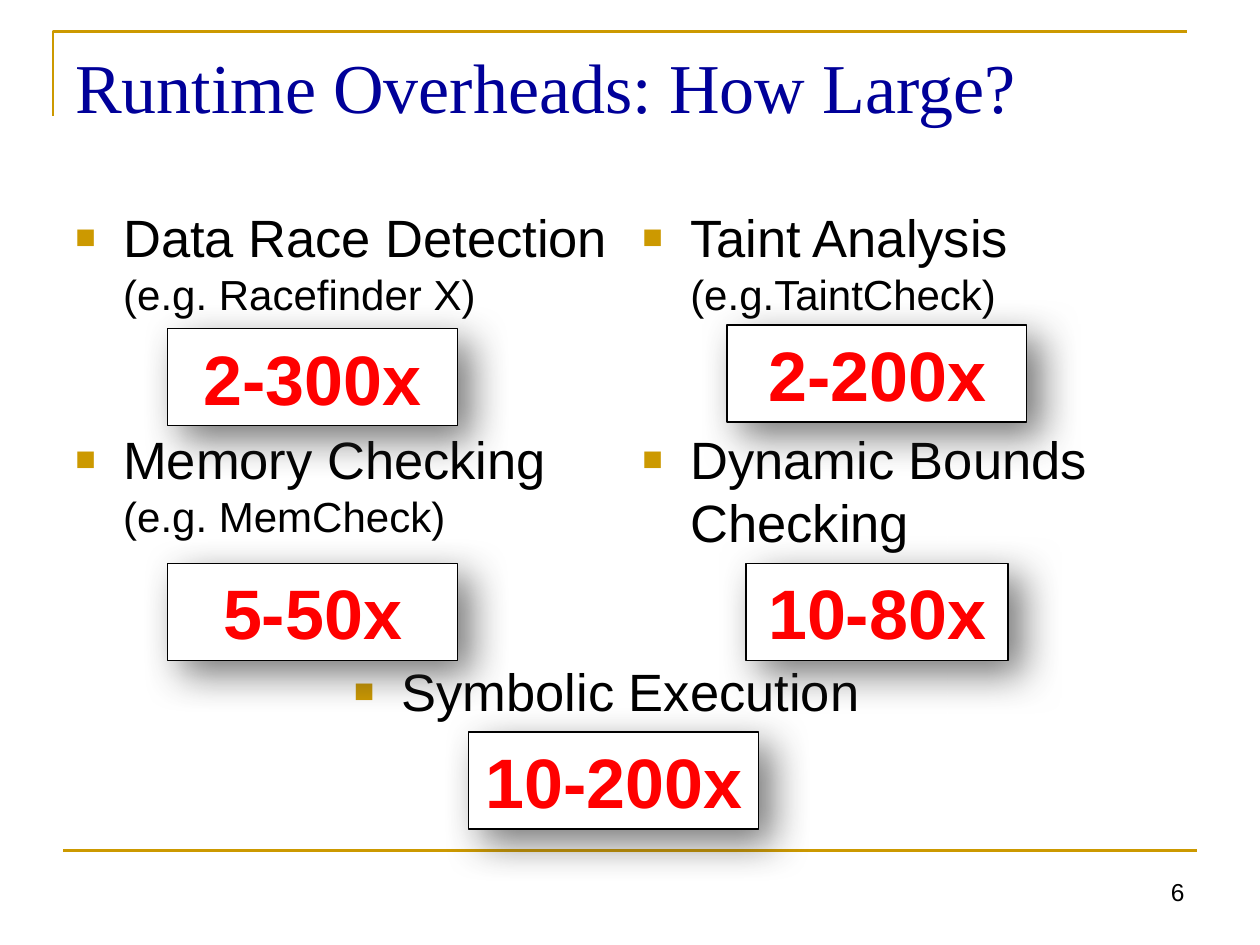
from lxml.etree import SubElement
from pptx import Presentation
from pptx.dml.color import RGBColor
from pptx.enum.shapes import MSO_CONNECTOR, MSO_SHAPE
from pptx.enum.text import MSO_ANCHOR, PP_ALIGN
from pptx.oxml.ns import qn
from pptx.util import Inches, Pt

COLORS = {
    "gold": "CC9900",
    "navy": "000099",
    "black": "000000",
    "white": "FFFFFF",
    "red": "FF0000",
    "shadow": "333333",
}


def rgb(name):
    return RGBColor.from_string(COLORS[name])


class SlideBuilder:
    body_font = "Arial"
    title_font = "Times New Roman"
    bullet_indent = Inches(0.38)

    def __init__(self, slide):
        self.slide = slide
        self.shapes = slide.shapes

    def add_run(self, paragraph, text, size, color="black", font=None, bold=False):
        run = paragraph.add_run()
        run.text = text
        run.font.name = font or self.body_font
        run.font.size = Pt(size)
        run.font.bold = bold
        run.font.color.rgb = rgb(color)

    def text_frame(self, left, top, width, height):
        box = self.shapes.add_textbox(
            Inches(left), Inches(top), Inches(width), Inches(height))
        box.text_frame.word_wrap = True
        return box.text_frame

    def text(self, text, box, size, color="black", font=None, align=PP_ALIGN.LEFT):
        paragraph = self.text_frame(*box).paragraphs[0]
        paragraph.alignment = align
        self.add_run(paragraph, text, size, color, font)

    def set_bullet(self, paragraph):
        properties = paragraph._p.get_or_add_pPr()
        properties.set("marL", str(self.bullet_indent))
        properties.set("indent", str(-self.bullet_indent))
        bullet_color = SubElement(properties, qn("a:buClr"))
        SubElement(bullet_color, qn("a:srgbClr"), val=COLORS["gold"])
        SubElement(properties, qn("a:buSzPct"), val="65000")
        SubElement(properties, qn("a:buFont"), typeface=self.body_font)
        SubElement(properties, qn("a:buChar"), char="■")

    def bullets(self, items, box, gap=62):
        frame = self.text_frame(*box)
        for index, (heading, example) in enumerate(items):
            paragraph = frame.add_paragraph() if index else frame.paragraphs[0]
            self.set_bullet(paragraph)
            if index:
                paragraph.space_before = Pt(gap)
            self.add_run(paragraph, heading, 30)
            if example:
                paragraph.add_line_break()
                self.add_run(paragraph, example, 24)

    def overhead(self, text, left, top, width):
        shape = self.shapes.add_shape(
            MSO_SHAPE.RECTANGLE, Inches(left), Inches(top), Inches(width), Inches(0.77))
        shape.fill.solid()
        shape.fill.fore_color.rgb = rgb("white")
        shape.line.color.rgb = rgb("black")
        shape.line.width = Pt(0.75)
        self.drop_shadow(shape)
        frame = shape.text_frame
        frame.word_wrap = False
        frame.vertical_anchor = MSO_ANCHOR.MIDDLE
        paragraph = frame.paragraphs[0]
        paragraph.alignment = PP_ALIGN.CENTER
        self.add_run(paragraph, text, 40, "red", bold=True)

    def drop_shadow(self, shape):
        shape.shadow.inherit = False
        effects = shape._element.spPr.find(qn("a:effectLst"))
        outer = SubElement(
            effects, qn("a:outerShdw"), blurRad=str(Pt(23)), dist=str(Pt(11)),
            dir=str(45 * 60000), algn="tl", rotWithShape="0")
        color = SubElement(outer, qn("a:srgbClr"), val=COLORS["shadow"])
        SubElement(color, qn("a:alpha"), val="65000")

    def rule(self, left, right, y):
        line = self.shapes.add_connector(
            MSO_CONNECTOR.STRAIGHT, Inches(left), Inches(y), Inches(right), Inches(y))
        self.gold_line(line)
        SubElement(line._element.spPr, qn("a:effectLst"))

    def corner(self, left, top, right, bottom):
        builder = self.shapes.build_freeform(Inches(left), Inches(bottom))
        builder.add_line_segments(
            [(Inches(left), Inches(top)), (Inches(right), Inches(top))], close=False)
        shape = builder.convert_to_shape()
        shape.fill.background()
        self.gold_line(shape)
        shape.shadow.inherit = False

    def gold_line(self, shape):
        shape.line.color.rgb = rgb("gold")
        shape.line.width = Pt(1.5)


def main():
    presentation = Presentation()
    presentation.slide_width = Inches(10)
    presentation.slide_height = Inches(7.5)
    builder = SlideBuilder(presentation.slides.add_slide(presentation.slide_layouts[6]))

    # Frame lines
    builder.corner(0.42, 0.25, 9.42, 0.92)
    builder.rule(0.5, 9.5, 6.75)

    # Title and page number
    builder.text("Runtime Overheads: How Large?", (0.5, 0.3, 9, 0.7), 40,
                 "navy", builder.title_font)
    builder.text("6", (7.17, 6.91, 2.33, 0.51), 14, align=PP_ALIGN.RIGHT)

    # Analyses: right column, left column, bottom centre
    builder.bullets([("Taint Analysis", "(e.g.TaintCheck)"),
                     ("Dynamic Bounds Checking", None)], (5, 1.58, 4.42, 3.5))
    builder.bullets([("Data Race Detection", "(e.g. Racefinder X)"),
                     ("Memory Checking", "(e.g. MemCheck)")], (0.5, 1.58, 4.5, 3.5))
    builder.bullets([("Symbolic Execution", None)], (2.71, 5.18, 4.5, 0.6))

    # Overhead of each analysis
    for text, left, top, width in [
        ("2-200x", 5.77, 2.58, 2.38),
        ("10-80x", 5.92, 4.47, 2.08),
        ("5-50x", 1.33, 4.47, 2.3),
        ("2-300x", 1.33, 2.61, 2.3),
        ("10-200x", 3.72, 5.81, 2.3),
    ]:
        builder.overhead(text, left, top, width)

    presentation.save("out.pptx")


if __name__ == "__main__":
    main()
